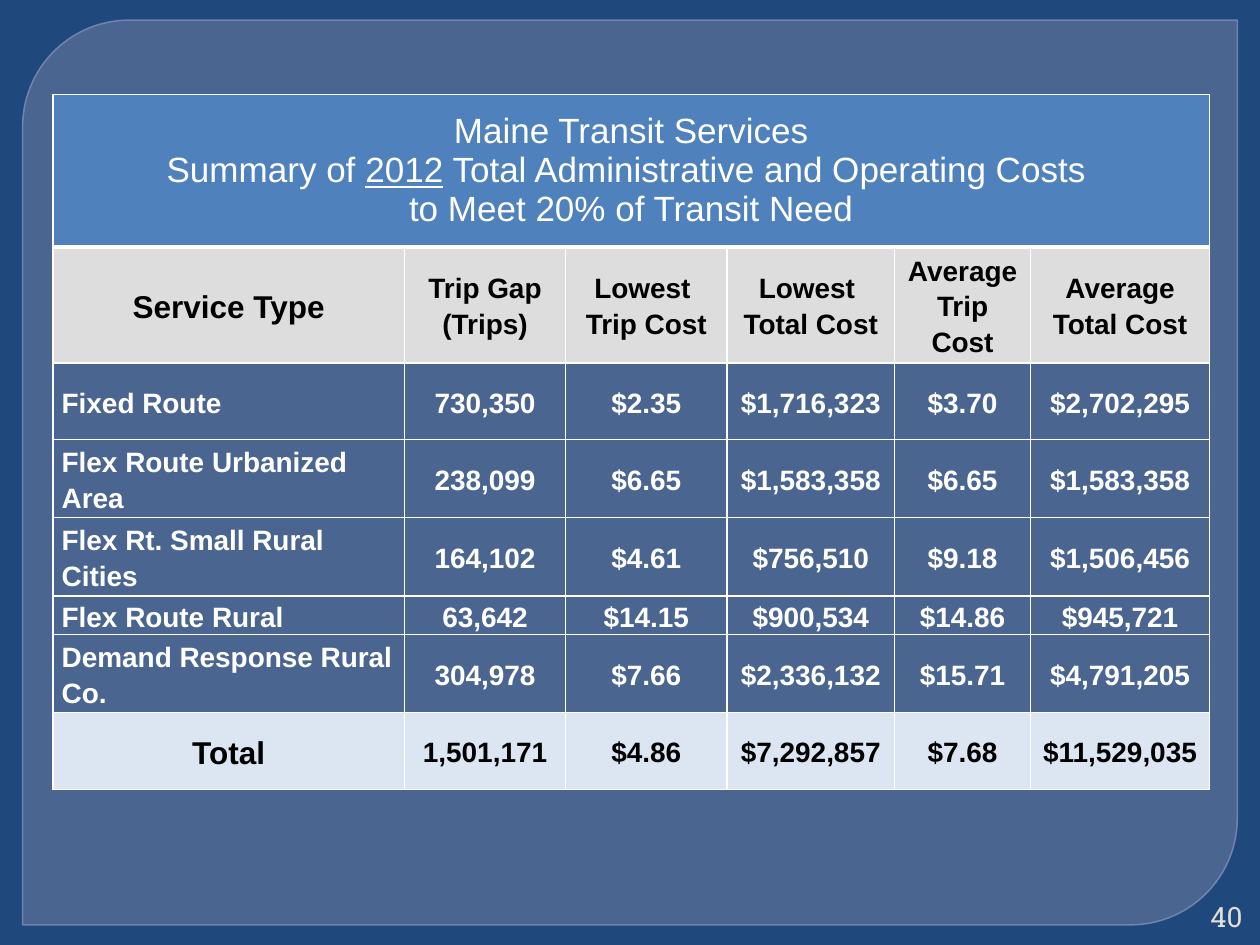
import dataclasses

import lxml.etree
import pptx
import pptx.dml.color
import pptx.enum.shapes
import pptx.enum.text
import pptx.oxml
import pptx.oxml.ns
import pptx.util

Inches = pptx.util.Inches
Pt = pptx.util.Pt
RGB = pptx.dml.color.RGBColor.from_string
Align = pptx.enum.text.PP_ALIGN
Anchor = pptx.enum.text.MSO_ANCHOR
qn = pptx.oxml.ns.qn


@dataclasses.dataclass(frozen=True)
class Theme:
    background: str = "1F497D"
    panel: str = "63759D"
    panel_line: str = "7989B3"
    title_fill: str = "4F81BD"
    header_fill: str = "DDDDDD"
    total_fill: str = "DCE6F2"
    light: str = "FFFFFF"
    dark: str = "000000"
    number: str = "E3E1D7"
    font: str = "Arial"
    number_font: str = "Roboto Slab"
    title_size: int = 20
    label_size: int = 18
    body_size: int = 16


theme = Theme()


def write_text(frame, text, size=theme.body_size, color=theme.light, font=theme.font,
               bold=True, align=Align.CENTER, spacing=None, before=0, after=0, underlined=None):
    """Write one paragraph per line; before applies to the first, after to the last."""
    lines = text.split("\n")
    for index, line in enumerate(lines):
        para = frame.paragraphs[0] if index == 0 else frame.add_paragraph()
        para.alignment = align
        para.line_spacing = spacing
        para.space_before = Pt(before if index == 0 else 0)
        para.space_after = Pt(after if index == len(lines) - 1 else 0)
        for part in line.partition(underlined) if underlined else [line]:
            if part:
                span = para.add_run()
                span.text = part
                span.font.name = font
                span.font.size = Pt(size)
                span.font.bold = bold
                span.font.underline = part == underlined
                span.font.color.rgb = RGB(color)


def set_borders(cell, widths):
    """Draw left, right, top and bottom lines, which must precede the cell's fill."""
    properties = cell._tc.get_or_add_tcPr()
    for position, (side, width) in enumerate(zip("LRTB", widths)):
        line = lxml.etree.Element(qn(f"a:ln{side}"), w=str(Pt(width)))
        fill = lxml.etree.SubElement(line, qn("a:solidFill"))
        lxml.etree.SubElement(fill, qn("a:srgbClr"), val=theme.light)
        properties.insert(position, line)


deck = pptx.Presentation()
deck.slide_width, deck.slide_height = Inches(10), Inches(7.5)
page = deck.slides.add_slide(deck.slide_layouts[6])
page.background.fill.solid()
page.background.fill.fore_color.rgb = RGB(theme.background)

# Translucent panel
panel = page.shapes.add_shape(
    pptx.enum.shapes.MSO_SHAPE.ROUND_2_DIAG_RECTANGLE,
    Inches(0.18), Inches(0.16), Inches(9.64), Inches(7.18))
panel.adjustments[0] = 0.118
panel.adjustments[1] = 0
panel.shadow.inherit = False
panel.fill.solid()
panel.fill.fore_color.rgb = RGB(theme.panel)
panel.line.color.rgb = RGB(theme.panel_line)
panel.line.width = Pt(0.87)
for color, percent in zip(panel._element.spPr.iter(qn("a:srgbClr")), (65, 88)):
    lxml.etree.SubElement(color, qn("a:alpha"), val=str(percent * 1000))

# Slide number
number_box = page.shapes.add_textbox(Inches(9.45), Inches(7.12), Inches(0.51), Inches(0.3))
number_box.text_frame.word_wrap = True
number_box.text_frame.vertical_anchor = Anchor.MIDDLE
write_text(number_box.text_frame, "40", color=theme.number, font=theme.number_font,
           bold=False, align=Align.RIGHT)

# Cost table
title = ("Maine Transit Services\n"
         "Summary of 2012 Total Administrative and Operating Costs \n"
         "to Meet 20% of Transit Need")
rows = [
    [title, "", "", "", "", ""],
    ["Service Type", "Trip Gap\n(Trips)", "Lowest \nTrip Cost", "Lowest \nTotal Cost",
     "Average Trip Cost", "Average Total Cost"],
    ["Fixed Route", "730,350", "$2.35", "$1,716,323", "$3.70", "$2,702,295"],
    ["Flex Route Urbanized Area", "238,099", "$6.65", "$1,583,358", "$6.65", "$1,583,358"],
    ["Flex Rt. Small Rural Cities", "164,102", "$4.61", "$756,510", "$9.18", "$1,506,456"],
    ["Flex Route Rural", "63,642", "$14.15", "$900,534", "$14.86", "$945,721"],
    ["Demand Response Rural Co.", "304,978", "$7.66", "$2,336,132", "$15.71", "$4,791,205"],
    ["Total", "1,501,171", "$4.86", "$7,292,857", "$7.68", "$11,529,035"],
]
column_widths = [2.79, 1.28, 1.28, 1.33, 1.08, 1.42]
row_heights = [1.21, 0.76, 0.61, 0.62, 0.62, 0.3, 0.62, 0.61]
TITLE, HEADER, TOTAL = 0, 1, len(rows) - 1
row_fills = {TITLE: theme.title_fill, HEADER: theme.header_fill, TOTAL: theme.total_fill}

table = page.shapes.add_table(
    len(rows), len(column_widths), Inches(0.42), Inches(0.75),
    Inches(sum(column_widths)), Inches(sum(row_heights))).table
table.first_row = table.horz_banding = False
for column, width in zip(table.columns, column_widths):
    column.width = Inches(width)
for row, height in zip(table.rows, row_heights):
    row.height = Inches(height)
table.cell(TITLE, 0).merge(table.cell(TITLE, len(column_widths) - 1))

for r, values in enumerate(rows):
    for c, text in enumerate(values):
        cell = table.cell(r, c)
        cell.vertical_anchor = Anchor.MIDDLE
        tight = r == TOTAL and c == len(values) - 1
        cell.margin_left = cell.margin_right = Inches(0.03 if tight else 0.07)
        cell.margin_top = cell.margin_bottom = 0
        set_borders(cell, (1, 1, 3 if r == HEADER else 1, 3 if r == TITLE else 1))
        if r in row_fills:
            cell.fill.solid()
            cell.fill.fore_color.rgb = RGB(row_fills[r])
        else:
            cell.fill.background()

        if cell.is_spanned:
            continue
        if r == TITLE:
            write_text(cell.text_frame, text, size=theme.title_size, bold=False,
                       before=6, underlined="2012")
            continue
        emphasized = r in (HEADER, TOTAL)
        write_text(
            cell.text_frame, text, spacing=1.15,
            size=theme.label_size if emphasized and c == 0 else theme.body_size,
            color=theme.dark if emphasized else theme.light,
            align=Align.LEFT if c == 0 and not emphasized else Align.CENTER,
            after=0 if r == HEADER and c > 0 else 8)

deck.save("out.pptx")
